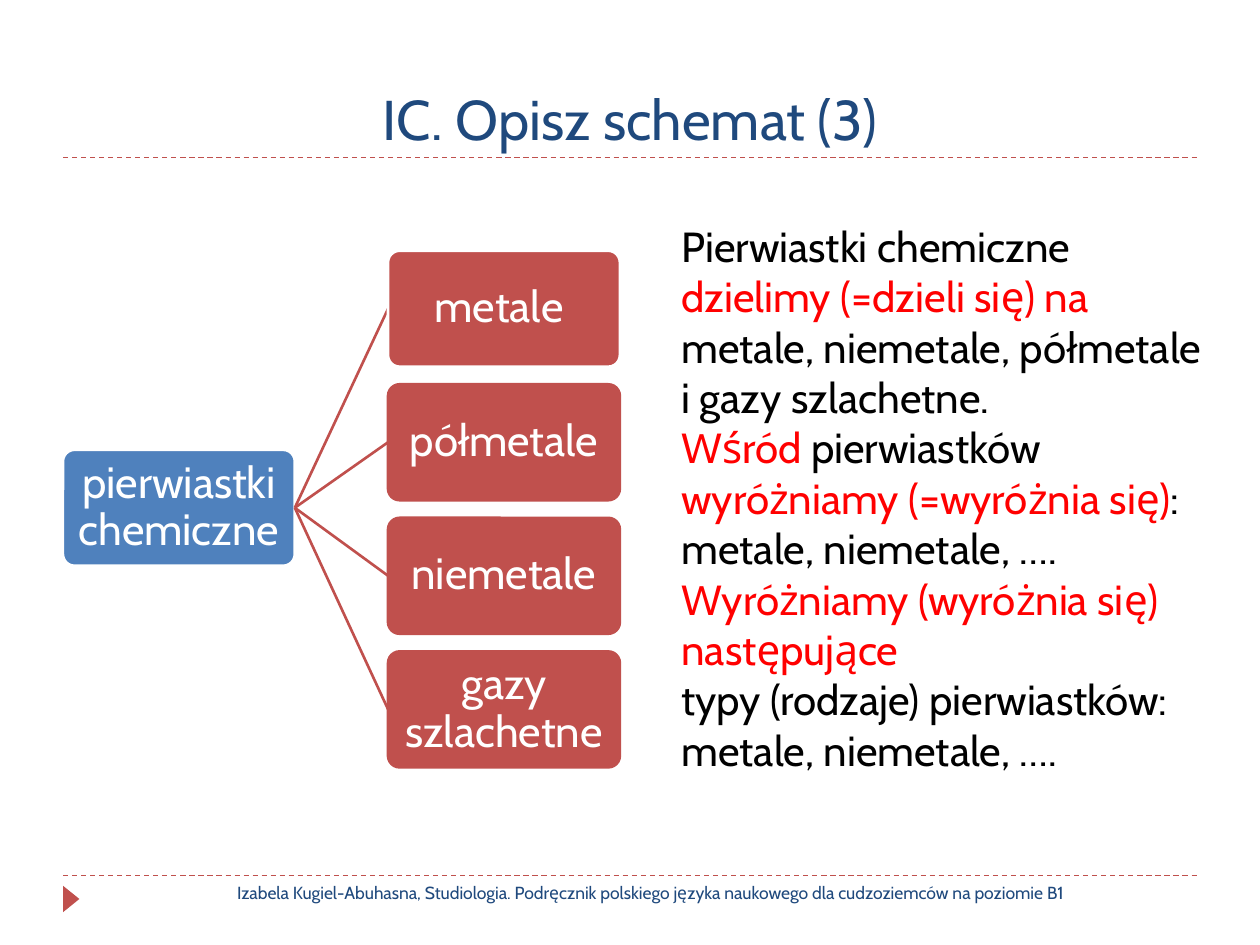
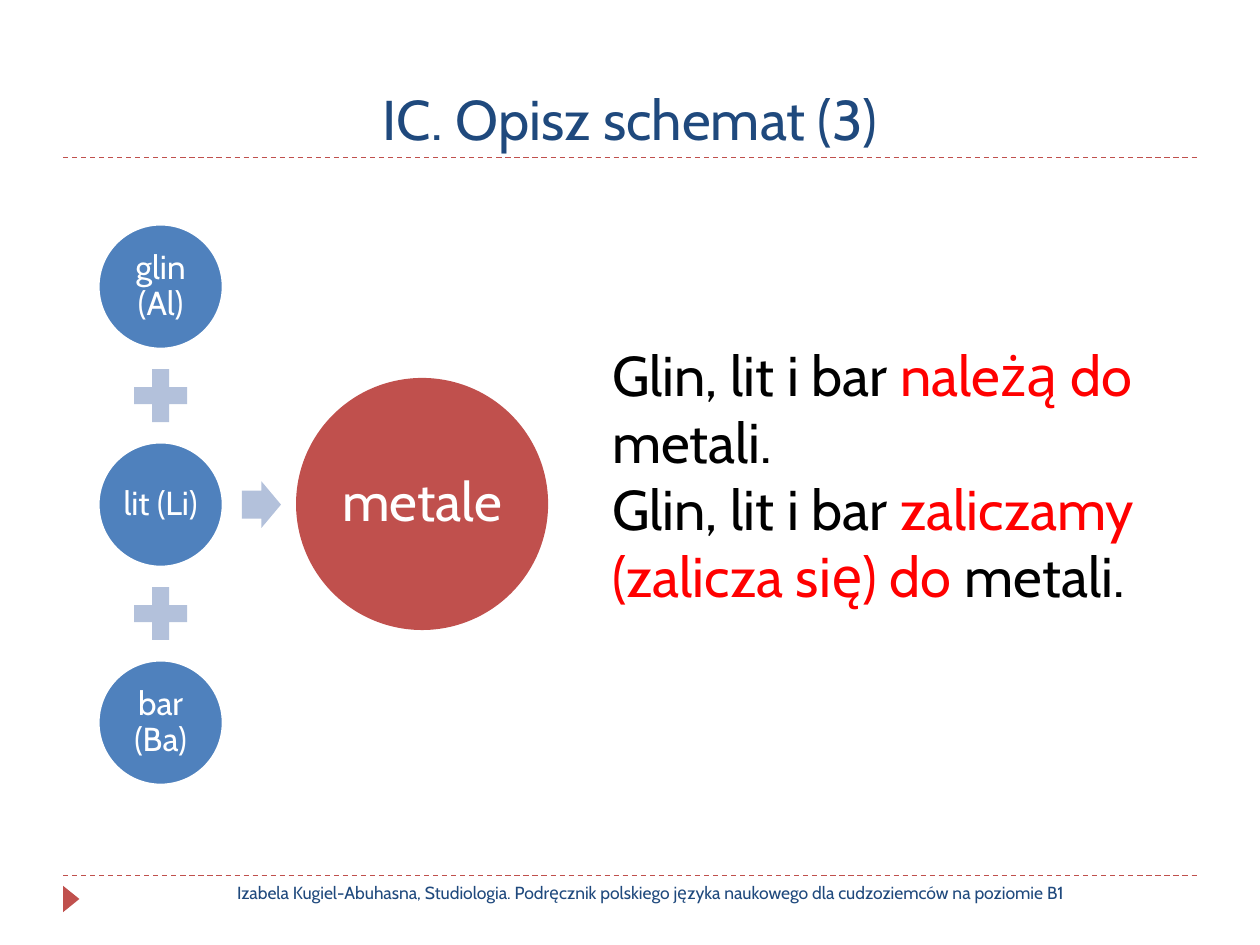
from dataclasses import dataclass

from lxml import etree
from pptx import Presentation
from pptx.dml.color import RGBColor
from pptx.enum import dml, shapes, text
from pptx.oxml import ns
from pptx.util import Inches, Pt

KIND = shapes.MSO_SHAPE
ALIGN = text.PP_ALIGN
ANCHOR = text.MSO_ANCHOR


@dataclass(frozen=True)
class Theme:
    font: str = "Cabin"
    navy: str = "1F497D"
    blue: str = "4F81BD"
    red: str = "C0504D"
    pale: str = "B3C1DB"
    white: str = "FFFFFF"
    black: str = "000000"
    mark: str = "FF0000"
    title: int = 32
    foot: int = 10
    box: int = 25
    small: int = 19
    large: int = 31
    body: int = 24
    rule: float = 0.75
    edge: float = 1.5


THEME = Theme()


@dataclass(frozen=True)
class Area:
    left: float
    top: float
    width: float
    height: float

    def lengths(self) -> list:
        return [Inches(n) for n in (self.left, self.top, self.width, self.height)]


@dataclass(frozen=True)
class Run:
    words: str
    color: str = THEME.black


@dataclass(frozen=True)
class Node:
    """A filled shape with a centred label."""
    words: str
    area: Area
    kind: int
    fill: str
    edge: str
    size: int
    inset: float


def red(words: str) -> Run:
    return Run(words, THEME.mark)


def add_run(para, run: Run, size: float) -> None:
    part = para.add_run()
    part.text = run.words
    part.font.name = THEME.font
    part.font.size = Pt(size)
    part.font.color.rgb = RGBColor.from_string(run.color)


def add_text(slide, area: Area, paras: list[list[Run]], size: float,
             align=ALIGN.LEFT, anchor=ANCHOR.TOP) -> None:
    frame = slide.shapes.add_textbox(*area.lengths()).text_frame
    frame.word_wrap = True
    frame.vertical_anchor = anchor
    for i, runs in enumerate(paras):
        para = frame.add_paragraph() if i else frame.paragraphs[0]
        para.alignment = align
        for run in runs:
            add_run(para, run, size)


def add_line(slide, start: tuple, end: tuple, width: float, dashed: bool = False) -> None:
    line = slide.shapes.add_connector(
        shapes.MSO_CONNECTOR.STRAIGHT, *[Inches(n) for n in (*start, *end)])
    line.line.color.rgb = RGBColor.from_string(THEME.red)
    line.line.width = Pt(width)
    if dashed:
        line.line.dash_style = dml.MSO_LINE.DASH
    etree.SubElement(line._element.spPr, ns.qn("a:effectLst"))


def add_shape(slide, kind: int, area: Area, fill: str):
    shape = slide.shapes.add_shape(kind, *area.lengths())
    shape.shadow.inherit = False
    shape.fill.solid()
    shape.fill.fore_color.rgb = RGBColor.from_string(fill)
    shape.line.fill.background()
    return shape


def add_node(slide, node: Node) -> None:
    shape = add_shape(slide, node.kind, node.area, node.fill)
    shape.line.color.rgb = RGBColor.from_string(node.edge)
    shape.line.width = Pt(THEME.edge)
    if node.kind == KIND.ROUNDED_RECTANGLE:
        shape.adjustments[0] = 0.1
    frame = shape.text_frame
    frame.word_wrap = True
    frame.vertical_anchor = ANCHOR.MIDDLE
    for side in ("left", "top", "right", "bottom"):
        setattr(frame, f"margin_{side}", Inches(node.inset))
    para = frame.paragraphs[0]
    para.alignment = ALIGN.CENTER
    para.line_spacing = 0.9
    add_run(para, Run(node.words, THEME.white), node.size)


def add_page(deck):
    """Add a blank slide with the shared title, rules and footer."""
    slide = deck.slides.add_slide(deck.slide_layouts[6])
    for y in (6.95, 1.25):
        add_line(slide, (0.5, y), (9.5, y), THEME.rule, dashed=True)
    flag = add_shape(slide, KIND.ISOSCELES_TRIANGLE, Area(0.46, 7.07, 0.21, 0.13), THEME.red)
    flag.rotation = 90
    add_text(slide, Area(0.5, 0.17, 9, 1.08),
             [[Run("IC. Opisz schemat (3)", THEME.navy)]],
             THEME.title, ALIGN.CENTER, ANCHOR.BOTTOM)
    add_text(slide, Area(0.83, 6.95, 8.66, 0.4),
             [[Run("Izabela Kugiel-Abuhasna, Studiologia. Podręcznik polskiego "
                   "języka naukowego dla cudzoziemców na poziomie B1", THEME.navy)]],
             THEME.foot, ALIGN.CENTER)
    return slide


def add_tree(slide) -> None:
    wide, high, step = 1.84, 0.92, 1.06
    left, top = 3.08, 1.99
    root = Area(0.5, 3.57, wide, high)
    hub = (root.left + wide, root.top + high / 2)
    add_node(slide, Node("pierwiastki chemiczne", root, KIND.ROUNDED_RECTANGLE,
                         THEME.blue, THEME.white, THEME.box, 0.02))
    for i, words in enumerate(("metale ", "półmetale", "niemetale", "gazy szlachetne")):
        area = Area(left, top + i * step, wide, high)
        add_line(slide, hub, (left, area.top + high / 2), THEME.edge)
        edge = THEME.red if i else THEME.white
        add_node(slide, Node(words, area, KIND.ROUNDED_RECTANGLE,
                             THEME.red, edge, THEME.box, 0.02))


def add_sum(slide) -> None:
    """Draw the column of elements joined by plus signs, leading to their group."""
    left, top, disc, plus, step = 0.78, 1.78, 0.99, 0.57, 1.73
    for i, words in enumerate(("glin (Al)", "lit (Li)", "bar (Ba)")):
        y = top + i * step
        if i:
            add_shape(slide, KIND.MATH_PLUS,
                      Area(left + (disc - plus) / 2, y - (step - disc + plus) / 2, plus, plus),
                      THEME.pale)
        add_node(slide, Node(words, Area(left, y, disc, disc), KIND.OVAL,
                             THEME.blue, THEME.white, THEME.small, 0.03))
    arrow = add_shape(slide, KIND.RIGHT_ARROW, Area(1.92, 3.82, 0.31, 0.37), THEME.pale)
    arrow.adjustments[0] = 0.6
    arrow.adjustments[1] = 0.5
    add_node(slide, Node("metale ", Area(2.36, 3.01, 1.98, 1.98), KIND.OVAL,
                         THEME.red, THEME.red, THEME.large, 0.04))


def main() -> None:
    deck = Presentation()
    deck.slide_width, deck.slide_height = Inches(10), Inches(7.5)

    split = add_page(deck)
    add_tree(split)
    add_text(split, Area(5.31, 1.7, 4.41, 4.54), [
        [Run("Pierwiastki chemiczne "), red("dzielimy (=dzieli się) na")],
        [Run("metale, niemetale, półmetale i gazy szlachetne.")],
        [red("Wśród"), Run(" pierwiastków "), red("wyróżniamy (=wyróżnia się)"), Run(":")],
        [Run("metale, niemetale, ….")],
        [red("Wyróżniamy (wyróżnia się) następujące")],
        [Run("typy (rodzaje) pierwiastków:")],
        [Run("metale, niemetale, ….")],
    ], THEME.body)

    group = add_page(deck)
    add_sum(group)
    add_text(group, Area(4.76, 2.65, 4.88, 2.26), [
        [Run("Glin, lit i bar "), red("należą do")],
        [Run("metali.")],
        [Run("Glin, lit i bar "), red("zaliczamy")],
        [red("(zalicza się) do"), Run(" metali.")],
    ], THEME.title)

    deck.save("out.pptx")


if __name__ == "__main__":
    main()
